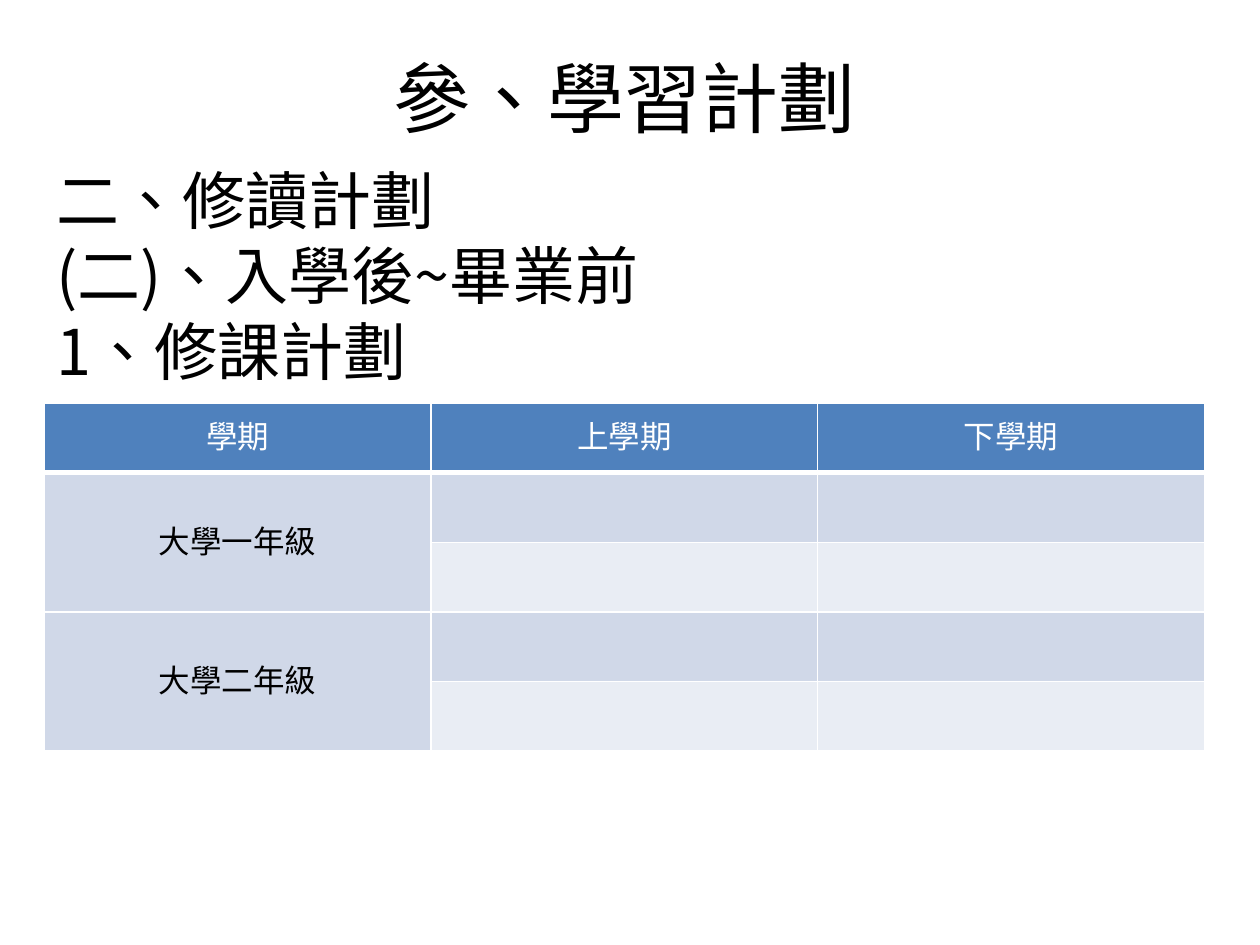
from lxml import etree
from pptx import Presentation
from pptx.dml.color import RGBColor
from pptx.enum import text
from pptx.oxml.ns import qn
from pptx.util import Inches, Pt

HEADING_FONT = "Noto Sans CJK SC"
COMMA_FONT = "Noto Sans CJK TC"
TABLE_FONT = "Arial"
BLACK, WHITE = "000000", "FFFFFF"
HEADER_FILL, BAND_FILLS = "4F81BD", ("D0D8E8", "E9EDF4")


def color(hex_value):
    return RGBColor.from_string(hex_value)


def add_text(paragraph, content, size=18, font=HEADING_FONT, fill=BLACK, align=None):
    paragraph.alignment = align
    run = paragraph.add_run()
    run.text = content
    run.font.size = Pt(size)
    run.font.name = font
    run.font.color.rgb = color(fill)
    properties = run.font._element
    properties.set("lang", "zh-TW")
    east_asian = etree.Element(qn("a:ea"), typeface=font)
    properties.find(qn("a:latin")).addnext(east_asian)


def add_text_frame(slide, left, top, width, height, anchor):
    frame = slide.shapes.add_textbox(left, top, width, height).text_frame
    frame.word_wrap = True
    frame.vertical_anchor = anchor
    return frame


def add_title(slide, left, top, width, height):
    frame = add_text_frame(slide, left, top, width, height, text.MSO_ANCHOR.MIDDLE)
    add_text(frame.paragraphs[0], "參、學習計劃", size=44, align=text.PP_ALIGN.CENTER)


def add_outline(slide, left, top, width, height):
    frame = add_text_frame(slide, left, top, width, height, text.MSO_ANCHOR.TOP)
    lines = [
        [("二、修讀計劃", HEADING_FONT)],
        [("(二)", HEADING_FONT), ("、", COMMA_FONT), ("入學後~畢業前", HEADING_FONT)],
        [("1、修課計劃", HEADING_FONT)],
    ]
    for index, line in enumerate(lines):
        paragraph = frame.add_paragraph() if index else frame.paragraphs[0]
        for content, font in line:
            add_text(paragraph, content, size=36, font=font)


def style_cell(cell, fill, bottom_width=1):
    """Border goes in before the fill, as the schema orders them."""
    properties = cell._tc.get_or_add_tcPr()
    for side, width in (("L", 1), ("R", 1), ("T", 1), ("B", bottom_width)):
        line = etree.SubElement(properties, qn(f"a:ln{side}"), w=str(Pt(width)))
        solid = etree.SubElement(line, qn("a:solidFill"))
        etree.SubElement(solid, qn("a:srgbClr"), val=WHITE)
    cell.fill.solid()
    cell.fill.fore_color.rgb = color(fill)
    cell.vertical_anchor = text.MSO_ANCHOR.MIDDLE


def add_course_table(slide, left, top, width, height):
    headers = ["學期", "上學期", "下學期"]
    years = ["大學一年級", "大學二年級"]
    row_count = 1 + 2 * len(years)
    table = slide.shapes.add_table(
        row_count, len(headers), left, top, width, height).table

    def label(cell, content, fill):
        add_text(cell.text_frame.paragraphs[0], content, font=TABLE_FONT,
                 fill=fill, align=text.PP_ALIGN.CENTER)

    for column, header in enumerate(headers):
        style_cell(table.cell(0, column), HEADER_FILL, bottom_width=3)
        label(table.cell(0, column), header, WHITE)
        for row in range(1, row_count):
            style_cell(table.cell(row, column), BAND_FILLS[(row - 1) % 2])
    for index, year in enumerate(years):
        first_row = 1 + 2 * index
        year_cell = table.cell(first_row, 0)
        year_cell.merge(table.cell(first_row + 1, 0))
        label(year_cell, year, BLACK)


def main():
    presentation = Presentation()
    presentation.slide_width = Inches(10)
    presentation.slide_height = Inches(7.5)
    slide = presentation.slides.add_slide(presentation.slide_layouts[6])
    add_title(slide, Inches(0.46), Inches(0.14), Inches(9), Inches(1.25))
    add_outline(slide, Inches(0.35), Inches(1.23), Inches(9.21), Inches(4.34))
    add_course_table(slide, Inches(0.35), Inches(3.2), Inches(9.21), Inches(2.76))
    presentation.save("out.pptx")


if __name__ == "__main__":
    main()
